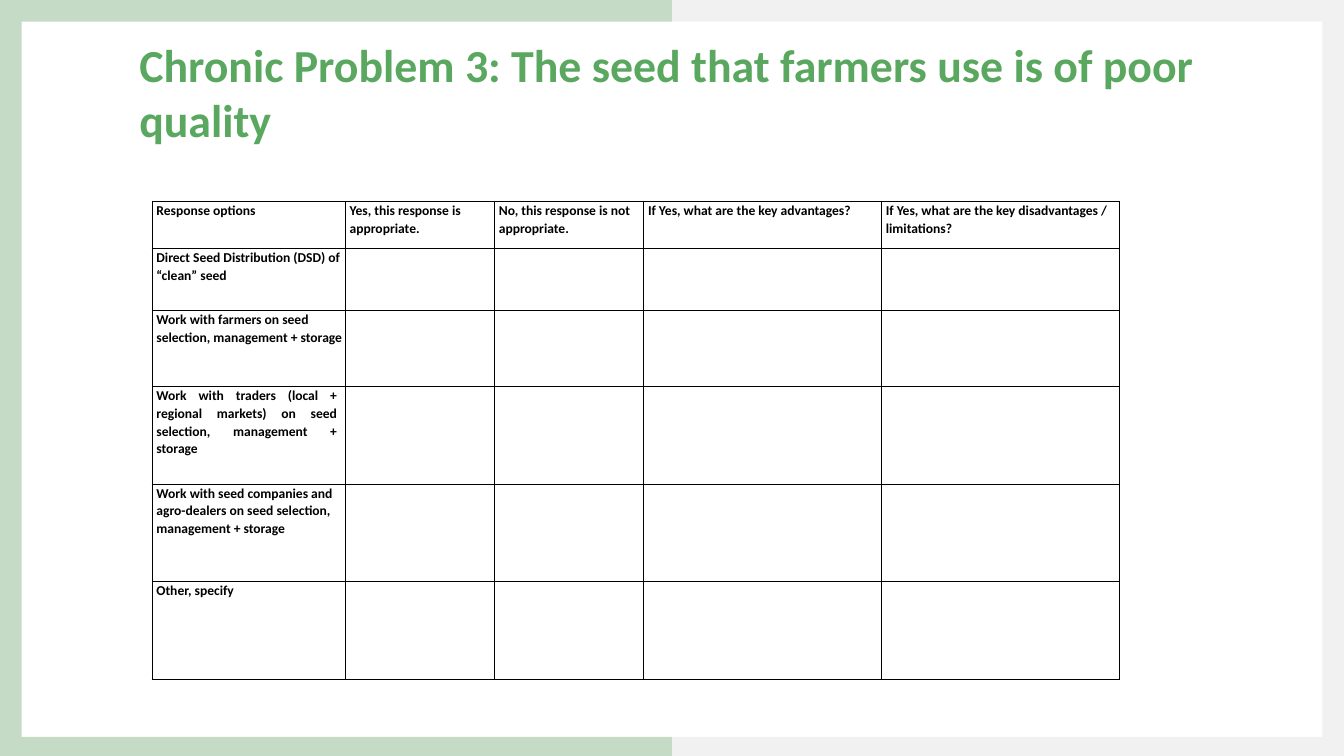
from lxml.etree import SubElement
from pptx import Presentation
from pptx.dml.color import RGBColor
from pptx.enum.text import PP_ALIGN as AL
from pptx.oxml.ns import qn
from pptx.util import Cm, Pt

# Content
TITLE = "Chronic Problem 3: The seed that farmers use is of poor quality"
HEADERS = [
    "Response options",
    "Yes, this response is appropriate.",
    "No, this response is not appropriate.",
    "If Yes, what are the key advantages?",
    "If Yes, what are the key disadvantages / limitations?",
]
# Response option, row height in cm, alignment, right indent in cm
OPTIONS = [
    ("Direct Seed Distribution (DSD) of “clean” seed", 2.57, AL.LEFT, 0),
    ("Work with farmers on seed selection, management + storage", 3.15, AL.LEFT, 0),
    ("Work with traders (local + regional markets) on seed selection, "
     "management + storage", 4.06, AL.JUSTIFY, 0.34),
    ("Work with seed companies and agro-dealers on seed selection, "
     "management + storage", 4.06, AL.LEFT, 0),
    ("Other, specify", 4.06, AL.JUSTIFY, 0),
]

# Layout in cm
WIDTH, HEIGHT = 55.85, 31.42
BORDER, BORDER_BOTTOM = 0.9, 0.79
COLS = [8.03, 6.2, 6.2, 9.88, 9.88]
HEADER_H = 1.98
TABLE_X, TABLE_Y = 6.32, 8.36
INDENT = 0.18

FONT = "Calibri"
GREEN = RGBColor(0x5A, 0xA7, 0x5F)
PALE_GREEN = RGBColor(0xC5, 0xDB, 0xC5)
PALE_GREY = RGBColor(0xF1, 0xF1, 0xF1)
BLACK = RGBColor(0, 0, 0)


def add_text(tf, text, *, size, color, align=AL.LEFT, spacing=1.0,
             before=0, left=0, right=0):
    tf.margin_left = tf.margin_right = tf.margin_top = tf.margin_bottom = 0
    tf.word_wrap = True
    p = tf.paragraphs[0]
    p.alignment, p.line_spacing, p.space_before = align, spacing, Pt(before)
    pPr = p._p.get_or_add_pPr()
    pPr.set("marL", str(Cm(left)))
    pPr.set("marR", str(Cm(right)))
    r = p.add_run()
    r.text = text
    r.font.name, r.font.size, r.font.bold = FONT, Pt(size), True
    r.font.color.rgb = color


def add_half_frame(s, outer, inner, color):
    """Draw a bracket from the slide's middle round the given outer edge."""
    mid, bottom = WIDTH / 2, HEIGHT - BORDER_BOTTOM
    points = [(mid, 0), (outer, 0), (outer, HEIGHT), (mid, HEIGHT),
              (mid, bottom), (inner, bottom), (inner, BORDER), (mid, BORDER)]
    points = [(Cm(x), Cm(y)) for x, y in points]
    outline = s.shapes.build_freeform(*points[0])
    outline.add_line_segments(points[1:], close=True)
    sp = outline.convert_to_shape()
    sp.shadow.inherit = False
    sp.fill.solid()
    sp.fill.fore_color.rgb = color
    sp.line.fill.background()


def format_cell(cell):
    cell.margin_left = cell.margin_right = cell.margin_top = cell.margin_bottom = 0
    tcPr = cell._tc.get_or_add_tcPr()
    for side in ("lnL", "lnR", "lnT", "lnB"):
        ln = SubElement(tcPr, qn(f"a:{side}"), w=str(Pt(1)))
        fill = SubElement(ln, qn("a:solidFill"))
        SubElement(fill, qn("a:srgbClr"), val=str(BLACK))
    cell.fill.background()


prs = Presentation()
prs.slide_width, prs.slide_height = Cm(WIDTH), Cm(HEIGHT)
s = prs.slides.add_slide(prs.slide_layouts[6])

# Two-tone frame
add_half_frame(s, 0, BORDER, PALE_GREEN)
add_half_frame(s, WIDTH, WIDTH - BORDER, PALE_GREY)

# Title
title = s.shapes.add_textbox(Cm(5.79), Cm(1.52), Cm(44.27), Cm(6.83))
add_text(title.text_frame, TITLE, size=54, color=GREEN)

# Response table
heights = [HEADER_H] + [height for _, height, _, _ in OPTIONS]
table = s.shapes.add_table(len(heights), len(COLS), Cm(TABLE_X), Cm(TABLE_Y),
                           Cm(sum(COLS)), Cm(sum(heights))).table
table.first_row = table.horz_banding = False
for col, width in zip(table.columns, COLS):
    col.width = Cm(width)
for row, height in zip(table.rows, heights):
    row.height = Cm(height)
for cell in table.iter_cells():
    format_cell(cell)

cell_format = dict(size=16, color=BLACK, spacing=1.07, before=5, left=INDENT)
for i, text in enumerate(HEADERS):
    add_text(table.cell(0, i).text_frame, text, **cell_format)
for i, (text, _, align, right) in enumerate(OPTIONS, start=1):
    add_text(table.cell(i, 0).text_frame, text, align=align, right=right, **cell_format)

prs.save("out.pptx")
